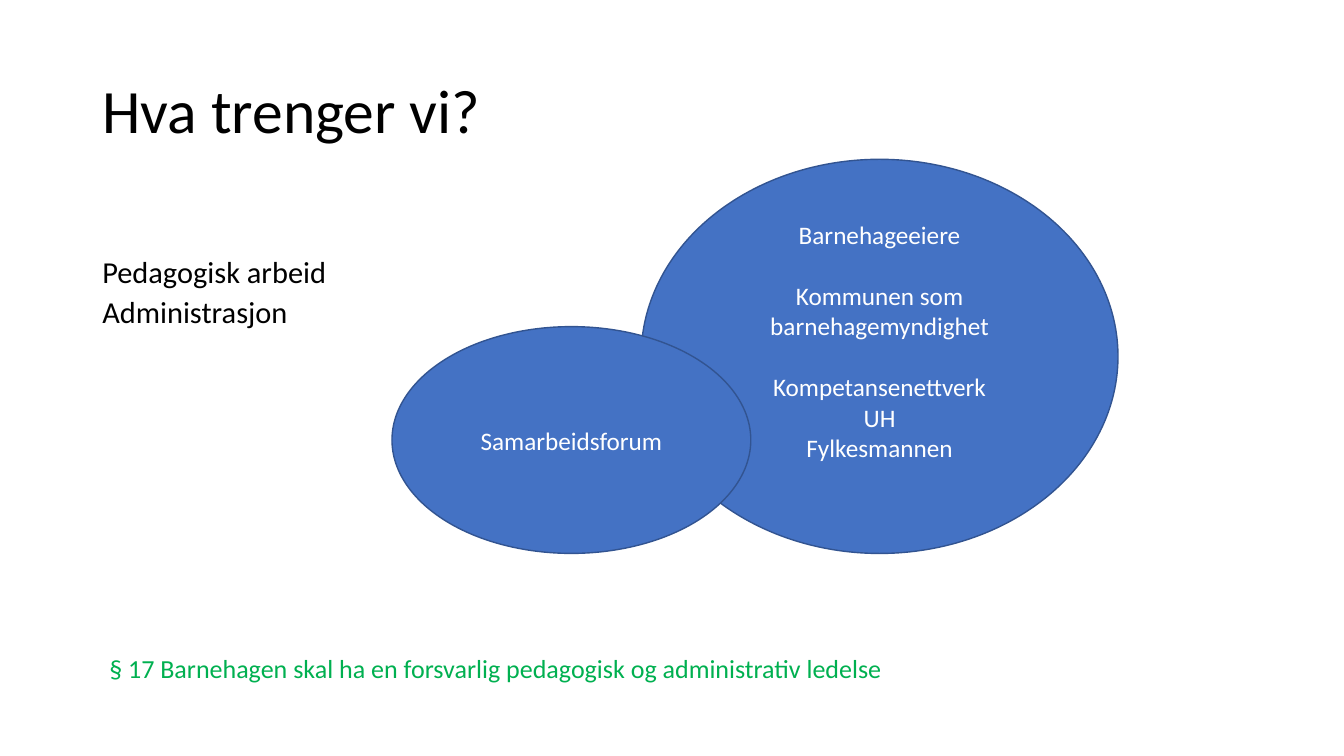
from dataclasses import dataclass

from pptx import Presentation
from pptx.dml.color import RGBColor
from pptx.enum.shapes import MSO_SHAPE
from pptx.enum.text import MSO_ANCHOR, PP_ALIGN
from pptx.util import Pt


@dataclass(frozen=True)
class Theme:
    font: str = "Calibri"
    black: str = "000000"
    white: str = "FFFFFF"
    green: str = "00B050"
    blue: str = "4472C4"
    outline: str = "325491"
    title_size: float = 44
    task_size: float = 21.7
    law_size: float = 18.6
    group_size: float = 18


theme = Theme()


def write(frame, lines, size, color, align=PP_ALIGN.LEFT, spacing=1.0):
    frame.word_wrap = True
    frame.text = "\n".join(lines)
    for paragraph in frame.paragraphs:
        paragraph.alignment = align
        paragraph.line_spacing = spacing
        for run in paragraph.runs:
            run.font.name = theme.font
            run.font.size = Pt(size)
            run.font.color.rgb = RGBColor.from_string(color)


presentation = Presentation()
presentation.slide_width = Pt(960)
presentation.slide_height = Pt(540)
slide = presentation.slides.add_slide(presentation.slide_layouts[5])

heading = slide.shapes.title
heading.left, heading.top, heading.width, heading.height = Pt(66), Pt(28.75), Pt(828), Pt(104.4)
heading.text_frame.vertical_anchor = MSO_ANCHOR.MIDDLE
write(heading.text_frame, ["Hva trenger vi?"], theme.title_size, theme.black, spacing=0.9)

tasks = slide.shapes.add_textbox(Pt(66), Pt(184.4), Pt(200), Pt(56)).text_frame
write(tasks, ["Pedagogisk arbeid", "Administrasjon"], theme.task_size, theme.black, spacing=0.7)
tasks.paragraphs[1].space_before = Pt(10)

law = slide.shapes.add_textbox(Pt(71), Pt(462.3), Pt(823), Pt(30)).text_frame
write(law, ["§ 17 Barnehagen skal ha en forsvarlig pedagogisk og administrativ ledelse"],
      theme.law_size, theme.green)

groups = [
    (458, 113.8, 340.6, 281.5,
     ["Barnehageeiere", "Kommunen som barnehagemyndighet", "Kompetansenettverk", "UH", "Fylkesmannen"]),
    (280, 233.3, 256.3, 162, ["Samarbeidsforum"]),
]
circles = []
for left, top, width, height, members in groups:
    circle = slide.shapes.add_shape(MSO_SHAPE.OVAL, Pt(left), Pt(top), Pt(width), Pt(height))
    circle.shadow.inherit = False
    circle.fill.solid()
    circle.fill.fore_color.rgb = RGBColor.from_string(theme.blue)
    circle.line.color.rgb = RGBColor.from_string(theme.outline)
    circle.line.width = Pt(1)
    circle.text_frame.vertical_anchor = MSO_ANCHOR.MIDDLE
    write(circle.text_frame, members, theme.group_size, theme.white, PP_ALIGN.CENTER)
    circles.append(circle)

partners = circles[0].text_frame
partners.margin_bottom = Pt(25.6)
for partner in partners.paragraphs[1:3]:
    partner.space_before = Pt(22)

presentation.save("out.pptx")
